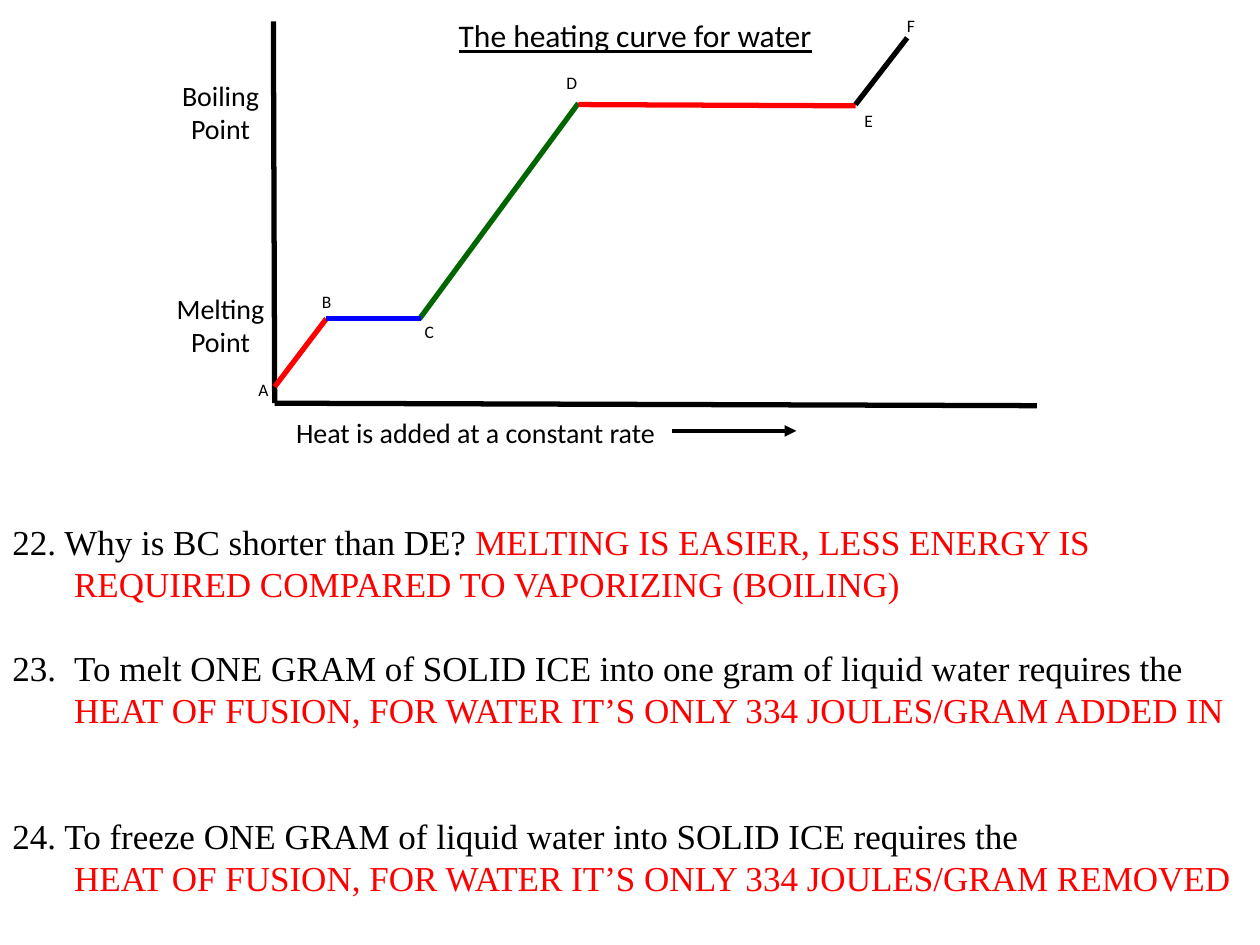
"""Build a slide with the heating curve for water and three answered questions."""
import pptx
import pptx.dml.color
import pptx.enum.shapes
import pptx.enum.text
import pptx.oxml
import pptx.oxml.ns
import pptx.util

Inches = pptx.util.Inches
Pt = pptx.util.Pt
ALIGN = pptx.enum.text.PP_ALIGN
BLACK, RED, GREEN, BLUE = "000000", "FF0000", "006600", "0000FF"

LINES = [
    ((2.17, 0.17), (2.18, 3.2), BLACK),
    ((8.23, 3.22), (2.18, 3.2), BLACK),
    ((2.18, 3.07), (2.59, 2.53), RED),
    ((3.33, 2.53), (4.59, 0.82), GREEN),
    ((4.59, 0.83), (6.79, 0.84), RED),
    ((6.79, 0.83), (7.2, 0.3), BLACK),
    ((2.59, 2.53), (3.34, 2.53), BLUE),
]
POINTS = [
    ("A", 1.93, 2.97, ALIGN.RIGHT),
    ("B", 2.43, 2.27, ALIGN.RIGHT),
    ("C", 3.33, 2.51, ALIGN.LEFT),
    ("D", 4.38, 0.53, ALIGN.RIGHT),
    ("E", 6.82, 0.83, ALIGN.LEFT),
    ("F", 7.06, 0.08, ALIGN.RIGHT),
]
QUESTIONS = [
    ([[("22. Why is BC shorter than DE? ", BLACK),
       ("MELTING IS EASIER, LESS ENERGY IS", RED)],
      [("REQUIRED COMPARED TO VAPORIZING (BOILING)", RED)]], 24),
    ([[("23.\tTo melt ONE GRAM of SOLID ICE into one gram of liquid water requires the", BLACK)],
      [("HEAT OF FUSION, FOR WATER IT’S ONLY 334 JOULES/GRAM ADDED IN", RED)]], 48),
    ([[("24. To freeze ONE GRAM of liquid water into SOLID ICE requires the", BLACK)],
      [("HEAT OF FUSION, FOR WATER IT’S ONLY 334 JOULES/GRAM REMOVED", RED)]], 0),
]


def color(hex_text):
    """Turn a hex string into a colour."""
    return pptx.dml.color.RGBColor.from_string(hex_text)


def style(span, size, font, hex_text):
    """Set the size, typeface and colour of a run."""
    span.font.size = Pt(size)
    span.font.name = font
    span.font.color.rgb = color(hex_text)


def add_line(slide, start, end, hex_text, width=3, arrow=False):
    """Draw a straight line, with an arrowhead at its end if wanted."""
    line = slide.shapes.add_connector(
        pptx.enum.shapes.MSO_CONNECTOR.STRAIGHT, *map(Inches, start + end))
    line.line.color.rgb = color(hex_text)
    line.line.width = Pt(width)
    properties = line._element.spPr
    if arrow:
        head = pptx.oxml.parse_xml(
            f'<a:tailEnd {pptx.oxml.ns.nsdecls("a")} type="triangle"/>')
        properties.find(pptx.oxml.ns.qn("a:ln")).append(head)
    properties.append(pptx.oxml.parse_xml(
        f'<a:effectLst {pptx.oxml.ns.nsdecls("a")}/>'))


def add_label(slide, text, place, size, align=ALIGN.LEFT, underline=False):
    """Add a Calibri label with narrow margins."""
    box = slide.shapes.add_textbox(*map(Inches, place))
    frame = box.text_frame
    frame.word_wrap = True
    frame.margin_left = frame.margin_right = Inches(0.04)
    frame.margin_top = frame.margin_bottom = Inches(0.04)
    para = frame.paragraphs[0]
    para.text = text
    para.alignment = align
    for span in para.runs:
        style(span, size, "Calibri", BLACK)
        span.font.underline = underline or None


def add_questions(slide, questions, place):
    """Add the questions as paragraphs with hanging indents."""
    box = slide.shapes.add_textbox(*map(Inches, place))
    frame = box.text_frame
    frame.word_wrap = True
    for index, (rows, gap) in enumerate(questions):
        para = frame.add_paragraph() if index else frame.paragraphs[0]
        para.line_spacing = Pt(24)
        para.space_after = Pt(gap)
        properties = para._p.get_or_add_pPr()
        properties.set("marL", str(Inches(0.49)))
        properties.set("indent", str(-Inches(0.49)))
        for number, row in enumerate(rows):
            if number:
                para.add_line_break()
            for text, hex_text in row:
                span = para.add_run()
                span.text = text
                style(span, 20, "Times New Roman", hex_text)


def main():
    """Build and save the slide."""
    deck = pptx.Presentation()
    deck.slide_width, deck.slide_height = Inches(10), Inches(7.5)
    slide = deck.slides.add_slide(deck.slide_layouts[6])
    for start, end, hex_text in LINES:
        add_line(slide, start, end, hex_text)
    for text, top in (("Melting\vPoint", 2.27), ("Boiling\vPoint", 0.58)):
        add_label(slide, text, (1.34, top, 0.82, 0.6), 16, ALIGN.CENTER)
    for text, left, top, align in POINTS:
        add_label(slide, text, (left, top, 0.24, 0.24), 10, align)
    add_label(slide, "Heat is added at a constant rate", (2.31, 3.26, 7.36, 0.54), 16)
    add_line(slide, (5.33, 3.42), (6.32, 3.42), BLACK, 2.25, arrow=True)
    add_label(slide, "The heating curve for water", (3.6, 0.09, 3.01, 0.33), 18,
              underline=True)
    add_questions(slide, QUESTIONS, (0, 4.08, 10, 3.13))
    deck.save("out.pptx")


if __name__ == "__main__":
    main()
